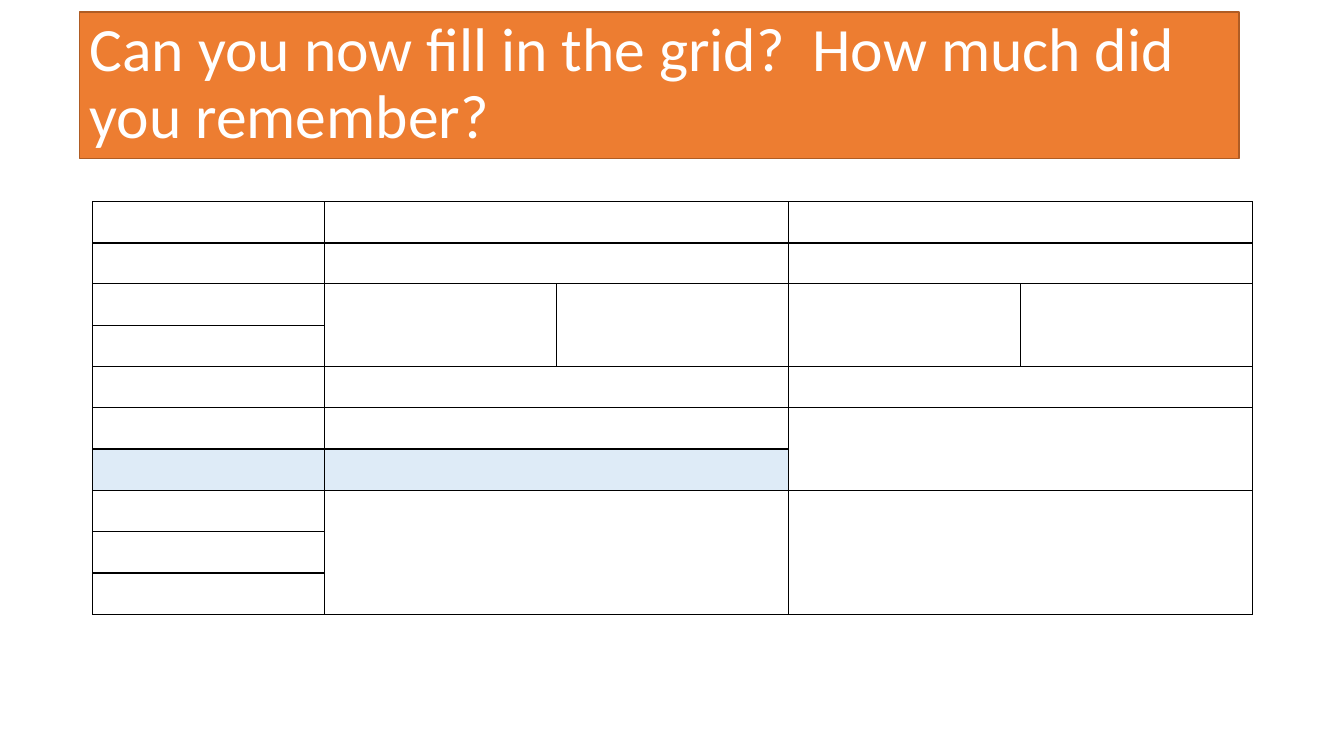
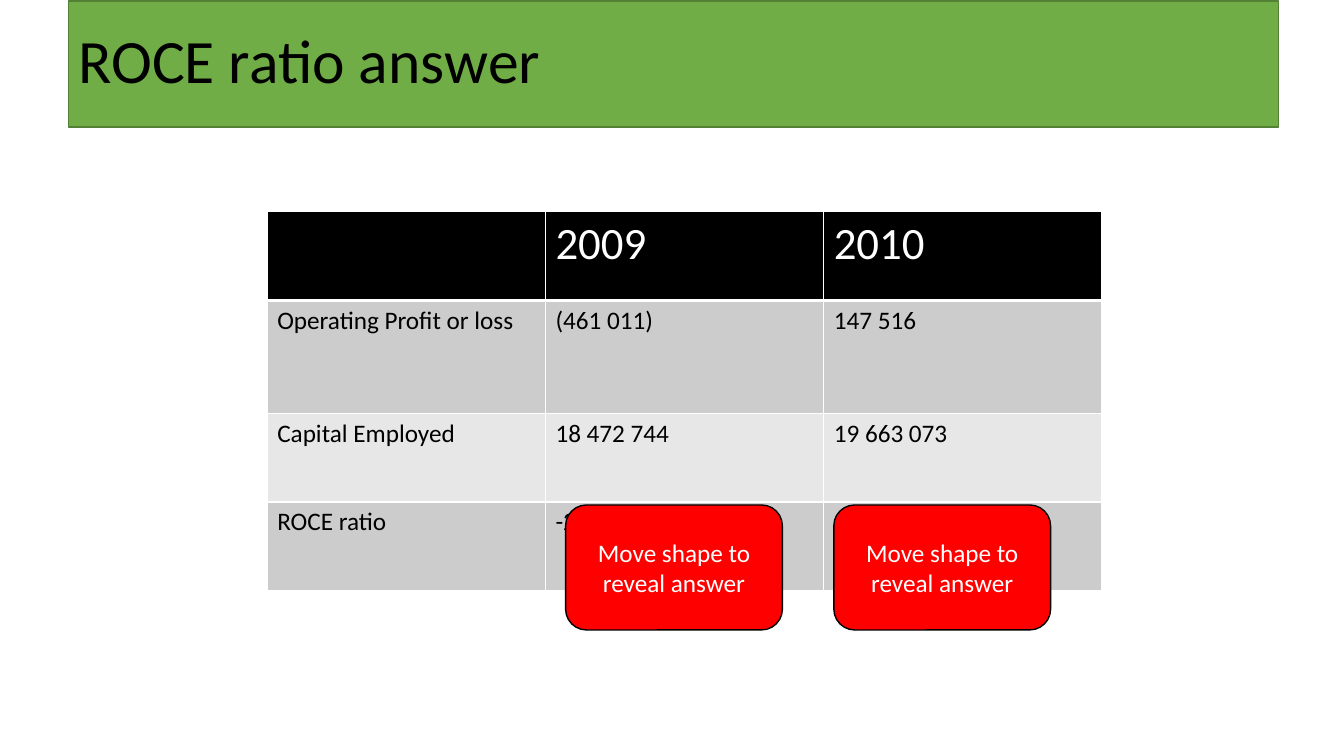
from lxml.etree import SubElement
from pptx import Presentation
from pptx.dml.color import RGBColor
from pptx.enum.shapes import MSO_SHAPE
from pptx.enum.text import MSO_ANCHOR, PP_ALIGN
from pptx.oxml.ns import qn
from pptx.util import Pt

EMU_PER_PX = 9144  # 100 px to the inch
BLACK, WHITE, RED = "000000", "FFFFFF", "FF0000"
GREY, LIGHT_GREY, PALE_BLUE = "CCCCCC", "E7E7E7", "DEEBF7"
ORANGE, DARK_ORANGE = "ED7D31", "AF5C24"
GREEN, DARK_GREEN = "70AD47", "538035"


def px(length):
    return length * EMU_PER_PX


def color(hex_string):
    return RGBColor.from_string(hex_string)


def apply(target, values):
    for name, value in values.items():
        setattr(target, name, value)


class Deck:
    """Holds the shared style and the slide being built."""

    title_font = {"name": "Calibri", "size": Pt(44)}
    header_font = {"name": "Calibri", "size": Pt(32)}
    body_font = {"name": "Calibri", "size": Pt(18)}
    title_paragraph = {"alignment": PP_ALIGN.LEFT, "line_spacing": 0.9}
    button_paragraph = {"alignment": PP_ALIGN.CENTER}

    def __init__(self, width, height):
        self.presentation = Presentation()
        apply(self.presentation, {"slide_width": px(width), "slide_height": px(height)})
        self.slide = None

    def new_slide(self):
        self.slide = self.presentation.slides.add_slide(self.presentation.slide_layouts[6])

    def add_text(self, frame, text, font, ink, paragraph_format=None):
        paragraph = frame.paragraphs[0]
        apply(paragraph, paragraph_format or {})
        run = paragraph.add_run()
        run.text = text
        apply(run.font, font)
        run.font.color.rgb = color(ink)

    def box(self, preset, area, fill, line, text, font, ink, paragraph_format):
        shape = self.slide.shapes.add_shape(preset, *map(px, area))
        shape.shadow.inherit = False
        shape.fill.solid()
        shape.fill.fore_color.rgb = color(fill)
        shape.line.color.rgb = color(line)
        shape.line.width = Pt(1)
        apply(shape.text_frame, {"word_wrap": True, "vertical_anchor": MSO_ANCHOR.MIDDLE})
        self.add_text(shape.text_frame, text, font, ink, paragraph_format)

    def title(self, text, area, fill, line, ink):
        self.box(MSO_SHAPE.RECTANGLE, area, fill, line, text,
                 self.title_font, ink, self.title_paragraph)

    def button(self, text, area):
        self.box(MSO_SHAPE.ROUNDED_RECTANGLE, area, RED, BLACK, text,
                 self.body_font, WHITE, self.button_paragraph)

    def table(self, left, top, column_widths, row_heights):
        frame = self.slide.shapes.add_table(
            len(row_heights), len(column_widths), px(left), px(top),
            px(sum(column_widths)), px(sum(row_heights)))
        apply(frame.table, {"first_row": False, "horz_banding": False})
        for column, width in zip(frame.table.columns, column_widths):
            column.width = px(width)
        for row, height in zip(frame.table.rows, row_heights):
            row.height = px(height)
        return frame.table

    def cell(self, cell, border, fill=None, bottom_width=1):
        # Borders come before the fill in the cell's properties
        properties = cell._tc.get_or_add_tcPr()
        for side in "LRTB":
            width = bottom_width if side == "B" else 1
            line = SubElement(properties, qn(f"a:ln{side}"), w=str(int(Pt(width))))
            SubElement(SubElement(line, qn("a:solidFill")), qn("a:srgbClr"), val=border)
        if fill:
            cell.fill.solid()
            cell.fill.fore_color.rgb = color(fill)
        else:
            cell.fill.background()


def build_grid_slide(deck):
    deck.new_slide()
    deck.title("Can you now fill in the grid?  How much did you remember?",
               (79, 12, 1150, 145), ORANGE, DARK_ORANGE, WHITE)

    # Empty grid with one tinted row
    table = deck.table(92, 200, [230] * 5, [41, 40] + [41] * 8)
    tinted = {(6, 0), (6, 1), (6, 2)}
    for row in range(10):
        for column in range(5):
            fill = PALE_BLUE if (row, column) in tinted else None
            deck.cell(table.cell(row, column), BLACK, fill)

    # Merged areas: row, column, rows spanned, columns spanned
    wide = [(row, column, 1, 2) for row in (0, 1, 4) for column in (1, 3)]
    tall = [(2, column, 2, 1) for column in range(1, 5)]
    lower = [(5, 1, 1, 2), (6, 1, 1, 2), (5, 3, 2, 2), (7, 1, 3, 2), (7, 3, 3, 2)]
    for row, column, rows, columns in wide + tall + lower:
        last = table.cell(row + rows - 1, column + columns - 1)
        table.cell(row, column).merge(last)


def build_answer_slide(deck):
    deck.new_slide()

    # Ratio table
    rows = [
        ("", "2009", "2010"),
        ("Operating Profit or loss", "(461 011)", "147 516"),
        ("Capital Employed", "18 472 744", "19 663 073"),
        ("ROCE ratio", "-2.5%", "0.75%"),
    ]
    table = deck.table(265, 210, [276] * 3, [88, 112, 88, 88])
    for index, texts in enumerate(rows):
        header = index == 0
        fill = BLACK if header else GREY if index % 2 else LIGHT_GREY
        font, ink = (deck.header_font, WHITE) if header else (deck.body_font, BLACK)
        for column, text in enumerate(texts):
            cell = table.cell(index, column)
            deck.cell(cell, WHITE, fill, 3 if header else 1)
            if text:
                deck.add_text(cell.text_frame, text, font, ink)

    deck.title("ROCE ratio answer", (68, 1, 1200, 125), GREEN, DARK_GREEN, BLACK)

    # Covers over the answers
    for left in (561, 827):
        deck.button("Move shape to reveal answer", (left, 501, 215, 124))


def main():
    deck = Deck(1333, 750)
    build_grid_slide(deck)
    build_answer_slide(deck)
    deck.presentation.save("out.pptx")


if __name__ == "__main__":
    main()
